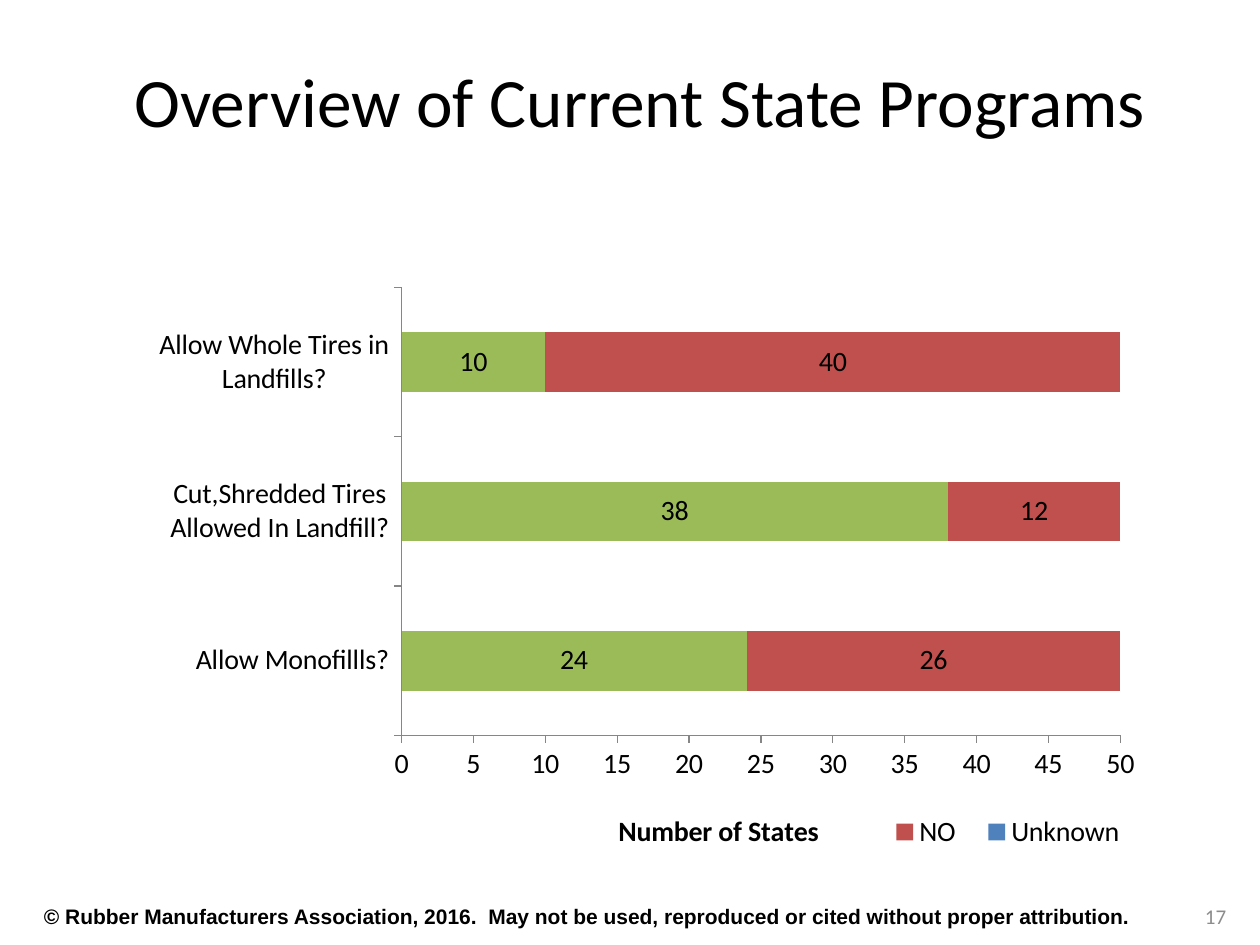
from lxml import etree
from pptx import Presentation
from pptx.chart.data import CategoryChartData
from pptx.dml.color import RGBColor
from pptx.enum.chart import XL_CHART_TYPE, XL_LEGEND_POSITION, XL_TICK_MARK
from pptx.enum.text import MSO_ANCHOR, PP_ALIGN
from pptx.oxml.ns import qn
from pptx.util import Inches, Pt

COLORS = {"text": "000000", "number": "8C8C8C", "axis": "868686",
          "yes": "9BBB59", "no": "C0504D", "unknown": "4F81BD"}
TITLE = "Overview of Current State Programs"
FOOTER = ("© Rubber Manufacturers Association, 2016.  May not be used, "
          "reproduced or cited without proper attribution.")
PAGE = "17"
AXIS_TITLE = "Number of States"
QUESTIONS = ["Allow Monofillls?", "Cut,Shredded Tires Allowed In Landfill?",
             "Allow Whole Tires in Landfills?"]
# name, values, colour, labelled
ANSWERS = [("YES", (24, 38, 10), "yes", True),
           ("NO", (26, 12, 40), "no", True),
           ("Unknown", (0, 0, 0), "unknown", False)]
HIDDEN_LEGEND_ENTRY = 2


def rgb(name):
    return RGBColor.from_string(COLORS[name])


def style_font(font, size, color="text", name="Calibri", bold=False):
    font.size, font.name, font.bold = Pt(size), name, bold
    font.color.rgb = rgb(color)


def write(shape, text, box, align=PP_ALIGN.LEFT, anchor=MSO_ANCHOR.MIDDLE, **font):
    shape.left, shape.top, shape.width, shape.height = map(Inches, box)
    frame = shape.text_frame
    frame.word_wrap = True
    frame.vertical_anchor = anchor
    paragraph = frame.paragraphs[0]
    paragraph.alignment = align
    run = paragraph.add_run()
    run.text = text
    style_font(run.font, **font)


def place(part, index, **settings):
    """Give a chart part a manual layout, as fractions of the chart."""
    for old in part.findall(qn("c:layout")):
        part.remove(old)
    layout = etree.Element(qn("c:layout"))
    manual = etree.SubElement(layout, qn("c:manualLayout"))
    for tag, value in settings.items():
        etree.SubElement(manual, qn(f"c:{tag}")).set("val", str(value))
    part.insert(index, layout)


def add_programs_chart(slide):
    data = CategoryChartData(number_format="General")
    data.categories = QUESTIONS
    for name, values, _, _ in ANSWERS:
        data.add_series(name, values)
    chart = slide.shapes.add_chart(
        XL_CHART_TYPE.BAR_STACKED, Inches(0.75), Inches(2.05),
        Inches(8.58), Inches(4.95), data).chart
    chart.has_title = False
    style_font(chart.font, 16)

    plot = chart.plots[0]
    plot.gap_width, plot.overlap = 150, 100
    plot.vary_by_categories = False
    for series, (_, _, color, labelled) in zip(plot.series, ANSWERS):
        series.format.fill.solid()
        series.format.fill.fore_color.rgb = rgb(color)
        if labelled:
            series.data_labels.show_value = True

    counts = chart.value_axis
    for axis in (chart.category_axis, counts):
        axis.has_major_gridlines = False
        axis.major_tick_mark = XL_TICK_MARK.OUTSIDE
        axis.minor_tick_mark = XL_TICK_MARK.NONE
        axis.format.line.color.rgb = rgb("axis")
        axis.format.line.width = Pt(0.75)
    counts.minimum_scale, counts.maximum_scale, counts.major_unit = 0, 50, 5
    counts.axis_title.text_frame.text = AXIS_TITLE
    caption = counts.axis_title.text_frame.paragraphs[0].runs[0]
    style_font(caption.font, 16, bold=True)

    chart.has_legend = True
    legend = chart.legend
    legend.position = XL_LEGEND_POSITION.BOTTOM
    legend.include_in_layout = False
    style_font(legend.font, 16)

    area = chart.element.find(f".//{qn('c:plotArea')}")
    legend_part = chart.element.find(f".//{qn('c:legend')}")
    place(area, 0, layoutTarget="inner", xMode="edge", yMode="edge",
          x=0.284, y=0.047, w=0.665, h=0.718)
    place(area.find(f"{qn('c:valAx')}/{qn('c:title')}"), 1,
          xMode="edge", yMode="edge", x=0.48, y=0.88)
    place(legend_part, 1, xMode="edge", yMode="edge",
          x=0.72, y=0.88, w=0.25, h=0.08)
    entry = etree.Element(qn("c:legendEntry"))
    etree.SubElement(entry, qn("c:idx")).set("val", str(HIDDEN_LEGEND_ENTRY))
    etree.SubElement(entry, qn("c:delete")).set("val", "1")
    legend_part.insert(1, entry)


def main():
    deck = Presentation()
    deck.slide_width, deck.slide_height = Inches(10), Inches(7.5)
    slide = deck.slides.add_slide(deck.slide_layouts[5])
    write(slide.shapes.title, TITLE, (0.58, 0.17, 9, 1.25),
          align=PP_ALIGN.CENTER, size=39.6)
    add_programs_chart(slide)
    footer, number = (slide.shapes.add_textbox(0, 0, 0, 0) for _ in range(2))
    write(footer, FOOTER, (0.25, 7.12, 9, 0.29), anchor=MSO_ANCHOR.TOP,
          size=12, name="Arial", bold=True)
    write(number, PAGE, (7.5, 7.07, 2.33, 0.4), align=PP_ALIGN.RIGHT,
          size=12, color="number")
    deck.save("out.pptx")


if __name__ == "__main__":
    main()
